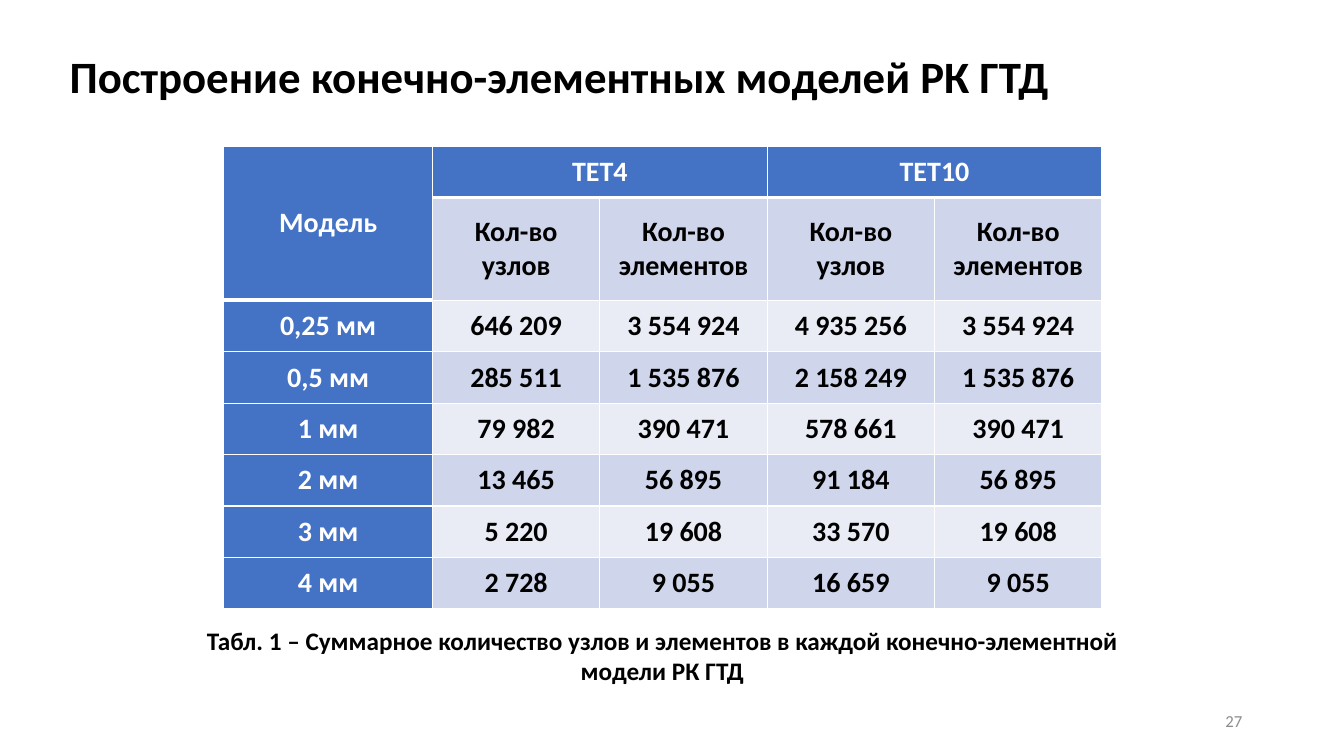
"""Builds the slide with the table of finite-element model sizes."""
from lxml.etree import SubElement
from pptx import Presentation
from pptx.dml.color import RGBColor
from pptx.enum.text import MSO_ANCHOR, MSO_AUTO_SIZE, PP_ALIGN
from pptx.oxml.ns import qn
from pptx.util import Pt

PX = 9144
BLACK = RGBColor(0x00, 0x00, 0x00)
WHITE = RGBColor(0xFF, 0xFF, 0xFF)
GRAY = RGBColor(0x8C, 0x8C, 0x8C)
HEADER_BLUE = RGBColor(0x44, 0x72, 0xC4)
BANDS = (RGBColor(0xE9, 0xEB, 0xF5), RGBColor(0xCF, 0xD5, 0xEA))

COLUMN_WIDTHS = (207, 166, 166, 166, 166)
ROW_HEIGHTS = (51, 102) + (51,) * 6
MODEL_SIZES = (
    ("Модель", "TET4", "", "TET10", ""),
    ("",) + ("Кол-во узлов", "Кол-во элементов") * 2,
    ("0,25 мм", "646 209", "3 554 924", "4 935 256", "3 554 924"),
    ("0,5 мм", "285 511", "1 535 876", "2 158 249", "1 535 876"),
    ("1 мм", "79 982", "390 471", "578 661", "390 471"),
    ("2 мм", "13 465", "56 895", "91 184", "56 895"),
    ("3 мм", "5 220", "19 608", "33 570", "19 608"),
    ("4 мм", "2 728", "9 055", "16 659", "9 055"),
)
MERGES = (((0, 0), (1, 0)), ((0, 1), (0, 2)), ((0, 3), (0, 4)))


def px(*lengths):
    """Turn pixel lengths into EMU."""
    return [length * PX for length in lengths]


def apply(target, formats):
    """Set every attribute named in formats on target."""
    for name, setting in formats.items():
        setattr(target, name, setting)


def write(frame, wording, size, color, bold=True, **paragraph_formats):
    """Put one formatted paragraph into a text frame."""
    paragraph = frame.paragraphs[0]
    apply(paragraph, paragraph_formats)
    run = paragraph.add_run()
    run.text = wording
    apply(run.font, {"name": "Calibri", "size": Pt(size), "bold": bold})
    run.font.color.rgb = color


def add_title(slide, wording):
    """Place and fill the title placeholder."""
    title = slide.shapes.title
    apply(title, dict(zip(("left", "top", "width", "height"), px(59, 39, 1181, 79))))
    apply(title.text_frame, {"vertical_anchor": MSO_ANCHOR.MIDDLE,
                             "auto_size": MSO_AUTO_SIZE.NONE})
    write(title.text_frame, wording, 32, BLACK,
          alignment=PP_ALIGN.LEFT, line_spacing=0.9)


def add_label(slide, box, wording, size, color, bold, alignment, **frame_formats):
    """Add a wrapped text box."""
    frame = slide.shapes.add_textbox(*px(*box)).text_frame
    apply(frame, {"word_wrap": True, **frame_formats})
    write(frame, wording, size, color, bold, alignment=alignment)


def is_thick_below(row, column):
    """Tell whether the heavy header rule runs under this cell."""
    return row == 0 or (row == 1 and column == 0)


def draw_borders(cell, row, column):
    """Give a cell white borders, heavy next to the header."""
    top = 3 if row and is_thick_below(row - 1, column) else 1
    bottom = 3 if is_thick_below(row, column) else 1
    properties = cell._tc.get_or_add_tcPr()
    widths = {"a:lnL": 1, "a:lnR": 1, "a:lnT": top, "a:lnB": bottom}
    for position, (side, width) in enumerate(widths.items()):
        border = SubElement(properties, qn(side), w=str(Pt(width)))
        fill = SubElement(border, qn("a:solidFill"))
        SubElement(fill, qn("a:srgbClr"), val=str(WHITE))
        properties.insert(position, border)


def format_cell(cell, row, column, wording):
    """Fill one table cell with its colour, borders and wording."""
    is_header = row == 0 or column == 0
    apply(cell, {"vertical_anchor": MSO_ANCHOR.MIDDLE,
                 "margin_left": 7 * PX, "margin_right": 7 * PX,
                 "margin_top": 0, "margin_bottom": 0})
    cell.fill.solid()
    cell.fill.fore_color.rgb = HEADER_BLUE if is_header else BANDS[row % 2]
    draw_borders(cell, row, column)
    if wording:
        write(cell.text_frame, wording, 20, WHITE if is_header else BLACK,
              alignment=PP_ALIGN.CENTER, space_after=Pt(6 if row > 1 else 0))


def add_model_table(slide):
    """Add the table of node and element counts."""
    table = slide.shapes.add_table(
        len(ROW_HEIGHTS), len(COLUMN_WIDTHS),
        *px(222, 145, sum(COLUMN_WIDTHS), sum(ROW_HEIGHTS))).table
    for column, width in zip(table.columns, px(*COLUMN_WIDTHS)):
        column.width = width
    for row, height in zip(table.rows, px(*ROW_HEIGHTS)):
        row.height = height
    for first, last in MERGES:
        table.cell(*first).merge(table.cell(*last))
    for row, wordings in enumerate(MODEL_SIZES):
        for column, wording in enumerate(wordings):
            format_cell(table.cell(row, column), row, column, wording)


def main():
    """Build and save the slide."""
    deck = Presentation()
    deck.slide_width, deck.slide_height = px(1333, 750)
    slide = deck.slides.add_slide(deck.slide_layouts.get_by_name("Title Only"))
    add_title(slide, "Построение конечно-элементных моделей РК ГТД")
    add_model_table(slide)
    add_label(slide, (942, 695, 300, 40), "27", 12, GRAY, False, PP_ALIGN.RIGHT,
              vertical_anchor=MSO_ANCHOR.MIDDLE)
    add_label(slide, (187, 615, 940, 71),
              "Табл. 1 – Суммарное количество узлов и элементов "
              "в каждой конечно-элементной модели РК ГТД",
              18, BLACK, True, PP_ALIGN.CENTER,
              auto_size=MSO_AUTO_SIZE.SHAPE_TO_FIT_TEXT)
    deck.save("out.pptx")


if __name__ == "__main__":
    main()
